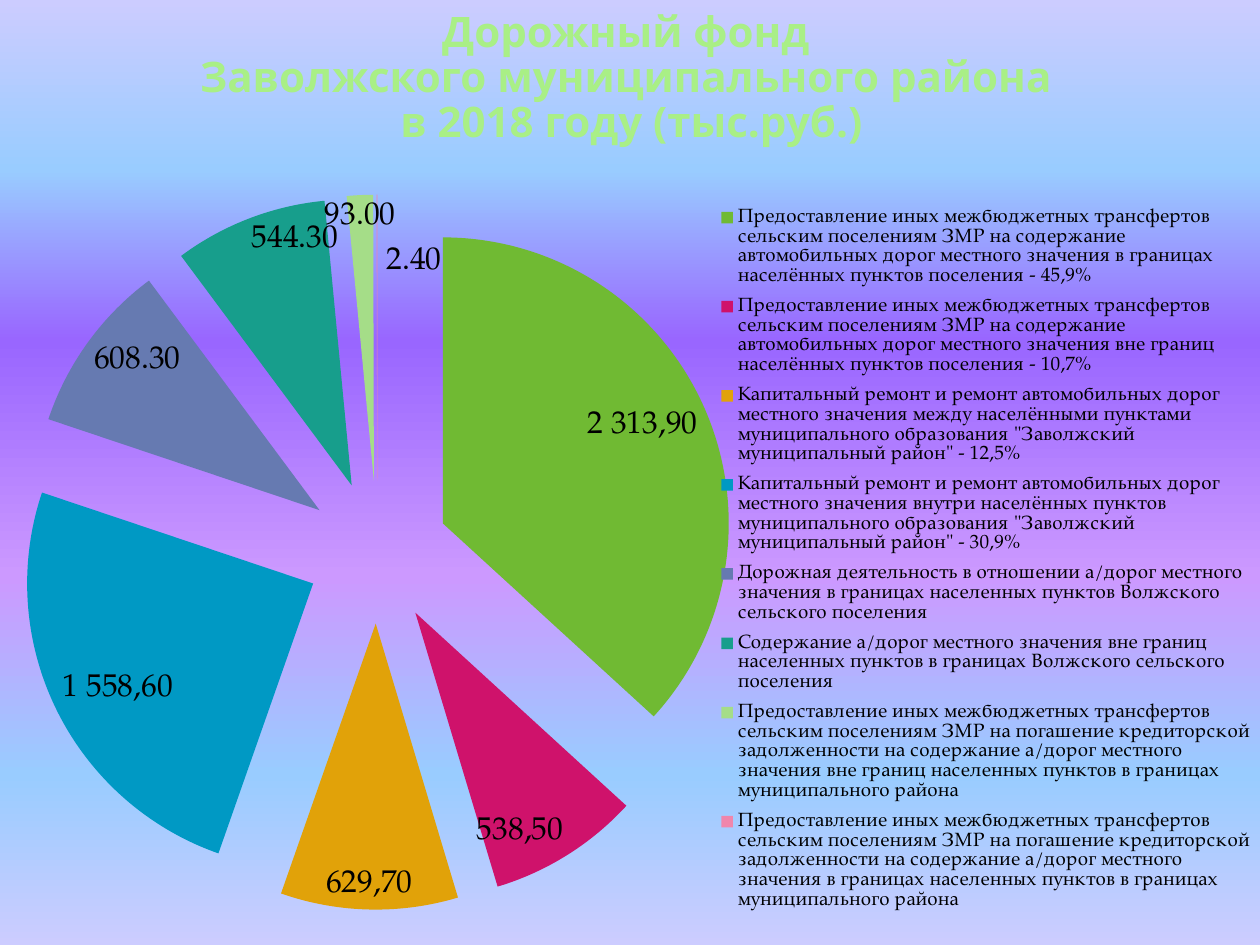
from lxml import etree
from pptx import Presentation
from pptx.chart.data import CategoryChartData
from pptx.dml.color import RGBColor
from pptx.enum.chart import XL_CHART_TYPE, XL_LABEL_POSITION, XL_LEGEND_POSITION
from pptx.enum.text import MSO_ANCHOR, PP_ALIGN
from pptx.oxml import parse_xml
from pptx.oxml.ns import nsdecls, qn
from pptx.util import Inches, Pt

PIE = XL_CHART_TYPE.PIE
INSIDE_END = XL_LABEL_POSITION.INSIDE_END
RIGHT = XL_LEGEND_POSITION.RIGHT
MIDDLE = MSO_ANCHOR.MIDDLE
CENTER = PP_ALIGN.CENTER

TITLE_FONT, CHART_FONT = "Noto Sans", "TeX Gyre Pagella"
TITLE = "Дорожный фонд \vЗаволжского муниципального района \vв 2018 году (тыс.руб.)"
BACKGROUND = [(0, "CCCCFF"), (18, "99CCFF"), (36, "9966FF"),
              (61, "CC99FF"), (82, "99CCFF"), (100, "CCCCFF")]

TRANSFERS = "Предоставление иных межбюджетных трансфертов сельским поселениям ЗМР на "
UPKEEP = TRANSFERS + "содержание автомобильных дорог местного значения "
DEBT = TRANSFERS + ("погашение кредиторской задолженности на содержание "
                    "а/дорог местного значения ")
REPAIR = "Капитальный ремонт и ремонт автомобильных дорог местного значения "
DISTRICT = 'муниципального образования "Заволжский муниципальный район" - '
DEBT_END = "границ{} населенных пунктов в границах муниципального района"

# category, value, colour, fixed label text
SLICES = [
    (UPKEEP + "в границах населённых пунктов поселения - 45,9%", 2313.9, "70BA33", "2 313,90"),
    (UPKEEP + "вне границ населённых пунктов поселения - 10,7%", 538.5, "CF126B", "538,50"),
    (REPAIR + "между населёнными пунктами " + DISTRICT + "12,5%", 629.7, "E1A209", "629,70"),
    (REPAIR + "внутри населённых пунктов " + DISTRICT + "30,9%", 1558.6, "0099C4", "1 558,60"),
    ("Дорожная деятельность в отношении а/дорог местного значения в границах "
     "населенных пунктов Волжского сельского поселения", 608.3, "667AB1", None),
    ("Содержание а/дорог местного значения вне границ населенных пунктов "
     "в границах Волжского сельского поселения", 544.3, "179E8C", None),
    (DEBT + "вне " + DEBT_END.format(""), 93, "A5DD88", None),
    (DEBT + "в " + DEBT_END.format("ах"), 2.4, "F086AC", None),
]
PLOT_BOX = (0, 0.026, 0.582, 0.949)
LEGEND_BOX = (0.56, 0.03, 0.44, 0.96)


def rgb(color):
    return RGBColor.from_string(color)


def style(font, size, name=None, color="000000", bold=False):
    font.size, font.bold = Pt(size), bold
    font.color.rgb = rgb(color)
    if name:
        font.name = name


def add_text(s, text, box, size, **fmt):
    tf = s.shapes.add_textbox(*map(Inches, box)).text_frame
    tf.word_wrap, tf.vertical_anchor = True, MIDDLE
    p = tf.paragraphs[0]
    p.text, p.alignment, p.line_spacing = text, CENTER, 0.9
    for r in p.runs:
        style(r.font, size, **fmt)


def set_background(s, stops):
    fill = s.background.fill
    fill.gradient()
    fill.gradient_angle = 270
    gs_list = s._element.find(".//" + qn("a:gsLst"))
    for gs in list(gs_list):
        gs_list.remove(gs)
    for pos, color in stops:
        gs = etree.SubElement(gs_list, qn("a:gs"), pos=str(pos * 1000))
        etree.SubElement(gs, qn("a:srgbClr"), val=color)


def manual_layout(box, inner=False):
    target = '<c:layoutTarget val="inner"/>' if inner else ""
    modes = "".join(f'<c:{k}Mode val="edge"/>' for k in "xy")
    sizes = "".join(f'<c:{k} val="{v}"/>' for k, v in zip("xywh", box))
    return parse_xml(f'<c:layout {nsdecls("c")}><c:manualLayout>{target}{modes}{sizes}'
                     "</c:manualLayout></c:layout>")


def place_label(label, dx, dy):
    """Shift a data label from its usual place, in fractions of the chart."""
    d_lbl = label._get_or_add_dLbl()
    d_lbl.find(qn("c:idx")).addnext(parse_xml(
        f'<c:layout {nsdecls("c")}><c:manualLayout><c:x val="{dx}"/><c:y val="{dy}"/>'
        "</c:manualLayout></c:layout>"))


def add_pie(s, box):
    data = CategoryChartData(number_format="#,##0.00")
    data.categories = [row[0] for row in SLICES]
    data.add_series("Series 1", [row[1] for row in SLICES])
    chart = s.shapes.add_chart(PIE, *map(Inches, box), data).chart
    chart.has_title = False
    style(chart.font, 18, CHART_FONT)

    chart.has_legend = True
    legend = chart.legend
    legend.position, legend.include_in_layout = RIGHT, False
    style(legend.font, 11, CHART_FONT)
    legend._element.find(qn("c:legendPos")).addnext(manual_layout(LEGEND_BOX))

    plot_area = chart._chartSpace.chart.plotArea
    for old in plot_area.findall(qn("c:layout")):
        plot_area.remove(old)
    plot_area.insert(0, manual_layout(PLOT_BOX, inner=True))

    plot = chart.plots[0]
    plot.vary_by_categories = True
    series = plot.series[0]
    labels = series.data_labels
    labels.show_value, labels.position = True, INSIDE_END
    labels.number_format, labels.number_format_is_linked = "#,##0.00", False
    style(labels.font, 18, CHART_FONT)
    for i, (_, _, color, text) in enumerate(SLICES):
        point = series.points[i]
        point.format.fill.solid()
        point.format.fill.fore_color.rgb = rgb(color)
        point.format.line.fill.background()
        if text:
            tf = point.data_label.text_frame
            tf.text = text
            style(tf.paragraphs[0].runs[0].font, 18)
            point.data_label.position = INSIDE_END
    last = series.points[len(SLICES) - 1].data_label
    last.position = INSIDE_END
    place_label(last, 0.03, 0.06)
    series._element.find(qn("c:dPt")).addprevious(
        parse_xml(f'<c:explosion {nsdecls("c")} val="25"/>'))


prs = Presentation()
prs.slide_width, prs.slide_height = Inches(10), Inches(7.5)
s = prs.slides.add_slide(prs.slide_layouts[6])
set_background(s, BACKGROUND)
add_pie(s, (0.12, 1.39, 9.88, 5.98))
add_text(s, TITLE, (0.51, 0, 9, 1.25), 24, name=TITLE_FONT, color="A9EF86", bold=True)
prs.save("out.pptx")
